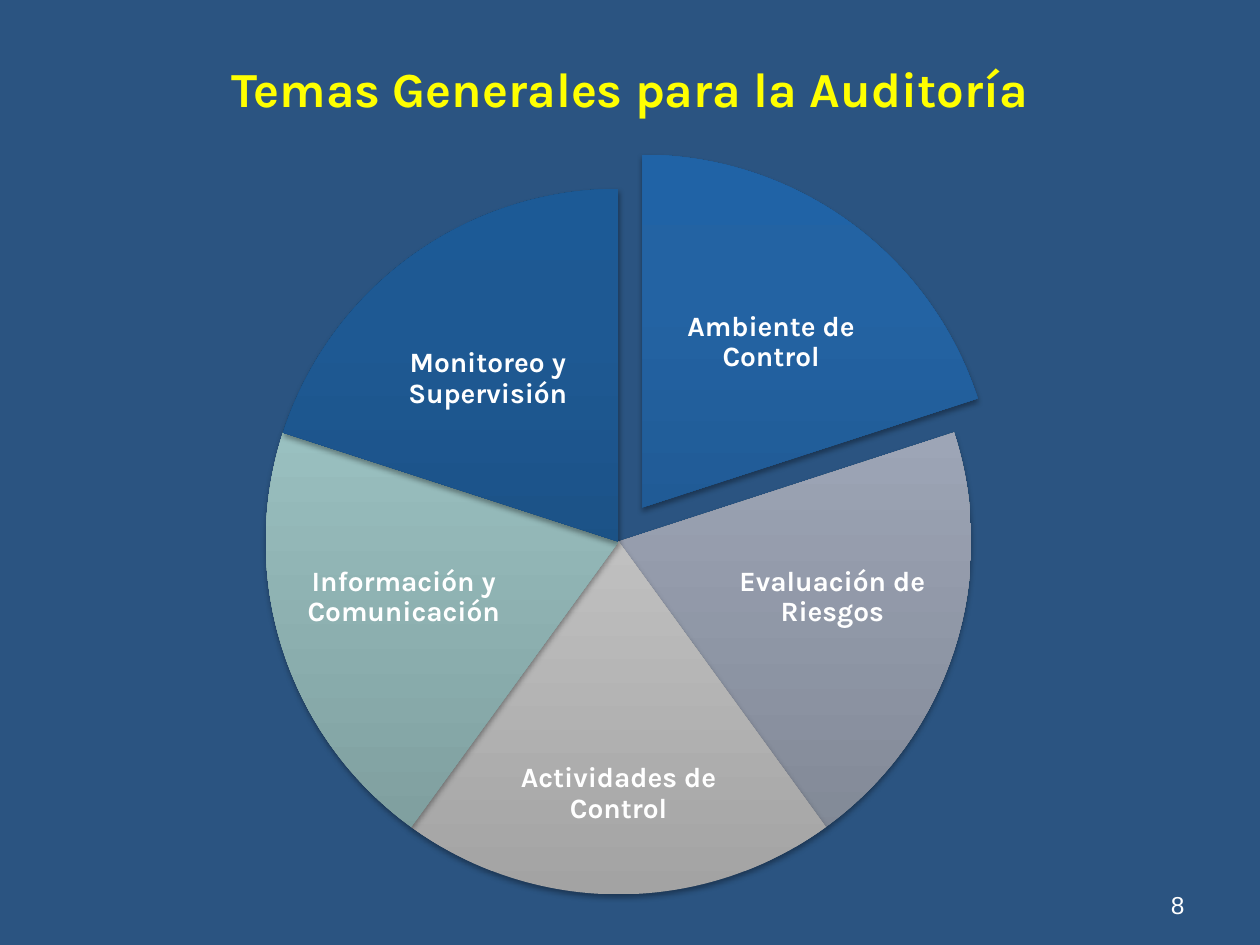
from lxml import etree
from pptx import Presentation
from pptx import util as u
from pptx.dml.color import RGBColor
from pptx.enum import shapes, text
from pptx.oxml import parse_xml

NS = 'xmlns:a="http://schemas.openxmlformats.org/drawingml/2006/main"'


def rgb(hex_color):
    return RGBColor.from_string(hex_color)


def add_text(parent, wording, box, font_name, size, color, bold, align, anchor):
    label = parent.add_textbox(*[u.Cm(length) for length in box])
    frame = label.text_frame
    frame.word_wrap = True
    frame.vertical_anchor = anchor
    frame.text = wording
    paragraph = frame.paragraphs[0]
    paragraph.alignment = align
    font = paragraph.runs[0].font
    font.name, font.size, font.bold = font_name, u.Pt(size), bold
    font.color.rgb = rgb(color)
    return frame


prs = Presentation()
prs.slide_width, prs.slide_height = u.Cm(25.4), u.Cm(19.05)
slide = prs.slides.add_slide(prs.slide_layouts[6])
slide.background.fill.solid()
slide.background.fill.fore_color.rgb = rgb("2B5481")

add_text(slide.shapes, "Temas Generales para la Auditoría", (0, 0, 25.4, 3.53),
         "Karla", 28, "FFFF00", True, text.PP_ALIGN.CENTER, text.MSO_ANCHOR.MIDDLE)
add_text(slide.shapes, "8", (18.21, 17.35, 5.92, 1.32),
         "Arial", 14, "FFFFFF", False, text.PP_ALIGN.RIGHT, text.MSO_ANCHOR.BOTTOM)

# Theme, label box, gradient from bottom to top; clockwise from twelve o'clock
themes = [
    ("Ambiente de Control", (13.13, 5.26, 4.83, 3.3), ("1B4C7E", "2363A3", "2063A6")),
    ("Evaluación de Riesgos", (14.66, 10.26, 4.24, 3.58), ("7E8592", "A4ACBE", "A4ADBF")),
    ("Actividades de Control", (9.93, 14.48, 5.08, 3.05), ("A3A3A3", "D3D3D3", "D4D4D4")),
    ("Información y Comunicación", (6.02, 10.26, 4.24, 3.58), ("7B9A9A", "A0C8C8", "A0CACA")),
    ("Monitoreo y Supervisión", (7.42, 5.99, 4.83, 3.3), ("174571", "1E5993", "1C5A96")),
]
DIAMETER = u.Cm(14.22)
FULL_TURN = 216  # 360 degrees in adjustment units
TOP = 162  # twelve o'clock
sweep = FULL_TURN / len(themes)
wheel = slide.shapes.add_group_shape().shapes

for index, (theme, label_box, colors) in enumerate(themes):
    left, top = (5.84, 3.12) if index == 0 else (5.36, 3.81)
    wedge = wheel.add_shape(shapes.MSO_SHAPE.PIE, u.Cm(left), u.Cm(top), DIAMETER, DIAMETER)
    for side in range(2):
        wedge.adjustments[side] = round((TOP + (index + side) * sweep) % FULL_TURN, 1)
    wedge.line.fill.background()

    stops = "".join(f'<a:gs pos="{position}"><a:srgbClr val="{color}"/></a:gs>'
                    for position, color in zip((0, 80000, 100000), colors))
    properties = wedge.element.spPr
    outline = properties.find("{*}ln")
    outline.addprevious(parse_xml(
        f'<a:gradFill {NS} rotWithShape="1"><a:gsLst>{stops}</a:gsLst>'
        '<a:lin ang="16200000" scaled="0"/></a:gradFill>'))
    outline.addnext(parse_xml(
        f'<a:effectLst {NS}><a:outerShdw blurRad="40000" dist="23000" dir="5400000" '
        'rotWithShape="0"><a:srgbClr val="000000"><a:alpha val="35000"/></a:srgbClr>'
        '</a:outerShdw></a:effectLst>'))

    frame = add_text(wheel, theme, label_box, "Karla", 16, "FFFFFF", True,
                     text.PP_ALIGN.CENTER, text.MSO_ANCHOR.MIDDLE)
    frame.margin_left = frame.margin_right = u.Cm(0.05)
    frame.margin_top = frame.margin_bottom = u.Cm(0.05)
    frame.paragraphs[0].line_spacing = 0.9

prs.save("out.pptx")
